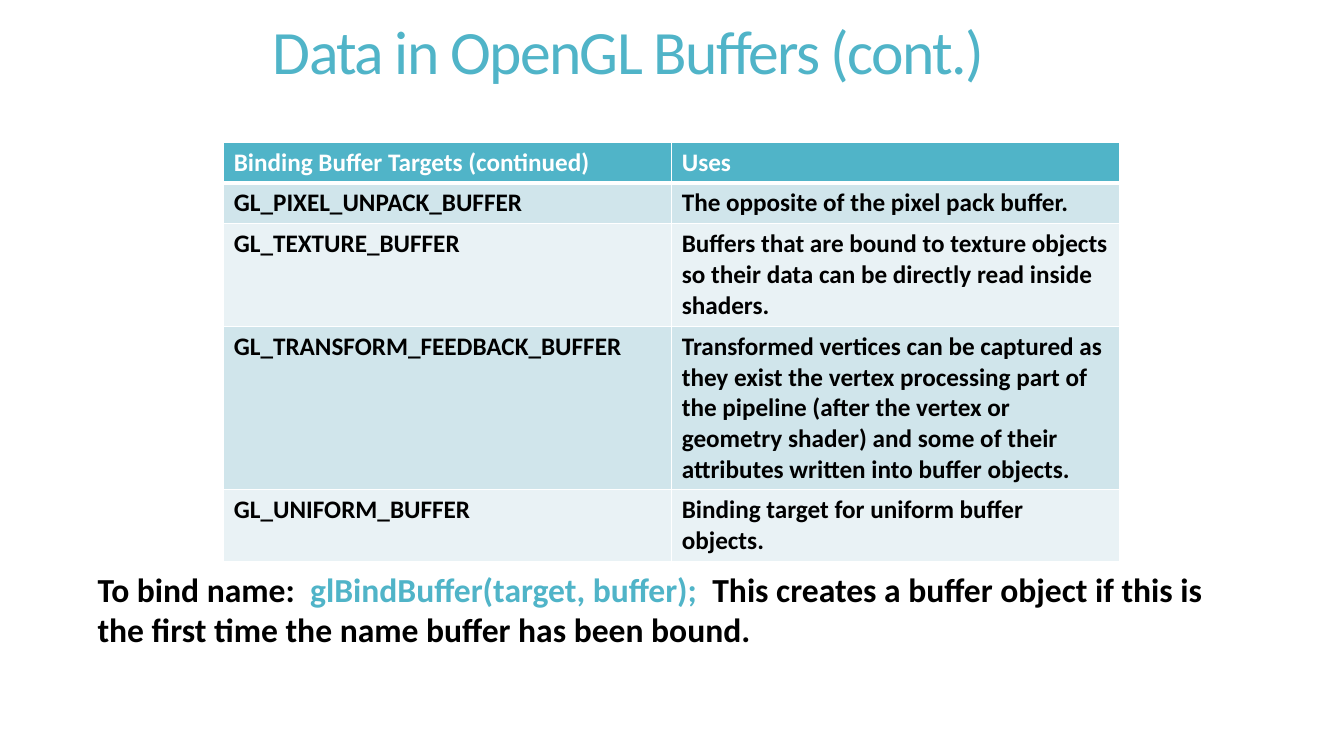
import dataclasses

import lxml.etree
import pptx
import pptx.dml.color
import pptx.enum.text
import pptx.oxml.ns
import pptx.util
from pptx.util import Cm


@dataclasses.dataclass(frozen=True)
class Theme:
    font: str = "Calibri"
    accent: str = "50B4C8"
    dark: str = "000000"
    light: str = "FFFFFF"
    bands: tuple = ("D0E5EB", "E9F2F5")
    title_size: int = 44
    body_size: int = 24
    table_size: int = 18
    title_tracking: float = -1.2
    thin_line: int = 1
    header_line: int = 3


def color(value):
    return pptx.dml.color.RGBColor.from_string(value)


class SlideBuilder:
    def __init__(self, slide, theme):
        self.slide = slide
        self.theme = theme

    def add_run(self, paragraph, text, size, fill, bold=False, tracking=0):
        run = paragraph.add_run()
        run.text = text
        formats = {"name": self.theme.font, "size": pptx.util.Pt(size), "bold": bold}
        for name, value in formats.items():
            setattr(run.font, name, value)
        run.font.color.rgb = color(fill)
        if tracking:
            run.font._element.set("spc", str(round(tracking * 100)))

    def add_text(self, box, runs, size, line_spacing=1.0, frame_formats=None, **run_formats):
        shape = self.slide.shapes.add_textbox(*map(Cm, box))
        formats = {"word_wrap": True, **(frame_formats or {})}
        for name, value in formats.items():
            setattr(shape.text_frame, name, value)
        paragraph = shape.text_frame.paragraphs[0]
        paragraph.line_spacing = line_spacing
        for text, fill in runs:
            self.add_run(paragraph, text, size, fill, **run_formats)

    def add_borders(self, cell, widths):
        properties = cell._tc.get_or_add_tcPr()
        qualified = pptx.oxml.ns.qn
        for side, width in widths.items():
            line = lxml.etree.SubElement(
                properties, qualified(f"a:ln{side}"), w=str(pptx.util.Pt(width)))
            fill = lxml.etree.SubElement(line, qualified("a:solidFill"))
            lxml.etree.SubElement(fill, qualified("a:srgbClr"), val=self.theme.light)

    def add_table(self, box, rows, heights):
        theme = self.theme
        table = self.slide.shapes.add_table(
            len(rows), len(rows[0]), *map(Cm, box)).table
        for row_index, (texts, height) in enumerate(zip(rows, heights)):
            table.rows[row_index].height = Cm(height)
            is_header = row_index == 0
            fill = theme.accent if is_header else theme.bands[(row_index - 1) % 2]
            widths = dict.fromkeys("LRTB", theme.thin_line)
            # The thick line is shared by the header and the row below it
            if row_index < 2:
                widths["B" if is_header else "T"] = theme.header_line
            for column_index, text in enumerate(texts):
                cell = table.cell(row_index, column_index)
                self.add_borders(cell, widths)
                cell.fill.solid()
                cell.fill.fore_color.rgb = color(fill)
                self.add_run(cell.text_frame.paragraphs[0], text, theme.table_size,
                             theme.light if is_header else theme.dark, bold=True)


BUFFER_TARGETS = [
    ("Binding Buffer Targets (continued)", "Uses"),
    ("GL_PIXEL_UNPACK_BUFFER", "The opposite of the pixel pack buffer."),
    ("GL_TEXTURE_BUFFER",
     "Buffers that are bound to texture objects so their data can be "
     "directly read inside shaders."),
    ("GL_TRANSFORM_FEEDBACK_BUFFER",
     "Transformed vertices can be captured as they exist the vertex processing "
     "part of the pipeline (after the vertex or geometry shader) and some of "
     "their attributes written into buffer objects."),
    ("GL_UNIFORM_BUFFER", "Binding target for uniform buffer objects."),
]
ROW_HEIGHTS = [1.03, 1.03, 2.58, 4.12, 1.8]


def main():
    presentation = pptx.Presentation()
    presentation.slide_width = Cm(33.87)
    presentation.slide_height = Cm(19.05)
    theme = Theme()
    builder = SlideBuilder(
        presentation.slides.add_slide(presentation.slide_layouts[6]), theme)

    # Title
    builder.add_text(
        (6.63, 0, 20.68, 2.79), [("Data in OpenGL Buffers (cont.)", theme.accent)],
        theme.title_size, line_spacing=0.85, tracking=theme.title_tracking,
        frame_formats={"vertical_anchor": pptx.enum.text.MSO_ANCHOR.MIDDLE})

    # Buffer targets and their uses
    builder.add_table((5.64, 3.58, 22.58, sum(ROW_HEIGHTS)), BUFFER_TARGETS, ROW_HEIGHTS)

    # Binding call
    builder.add_text(
        (2.21, 14.2, 29.44, 2.31),
        [("To bind name:  ", theme.dark),
         ("glBindBuffer(target, buffer);  ", theme.accent),
         ("This creates a buffer object if this is the first time the name "
          "buffer has been bound.", theme.dark)],
        theme.body_size, bold=True,
        frame_formats={"auto_size": pptx.enum.text.MSO_AUTO_SIZE.SHAPE_TO_FIT_TEXT})

    presentation.save("out.pptx")


if __name__ == "__main__":
    main()
